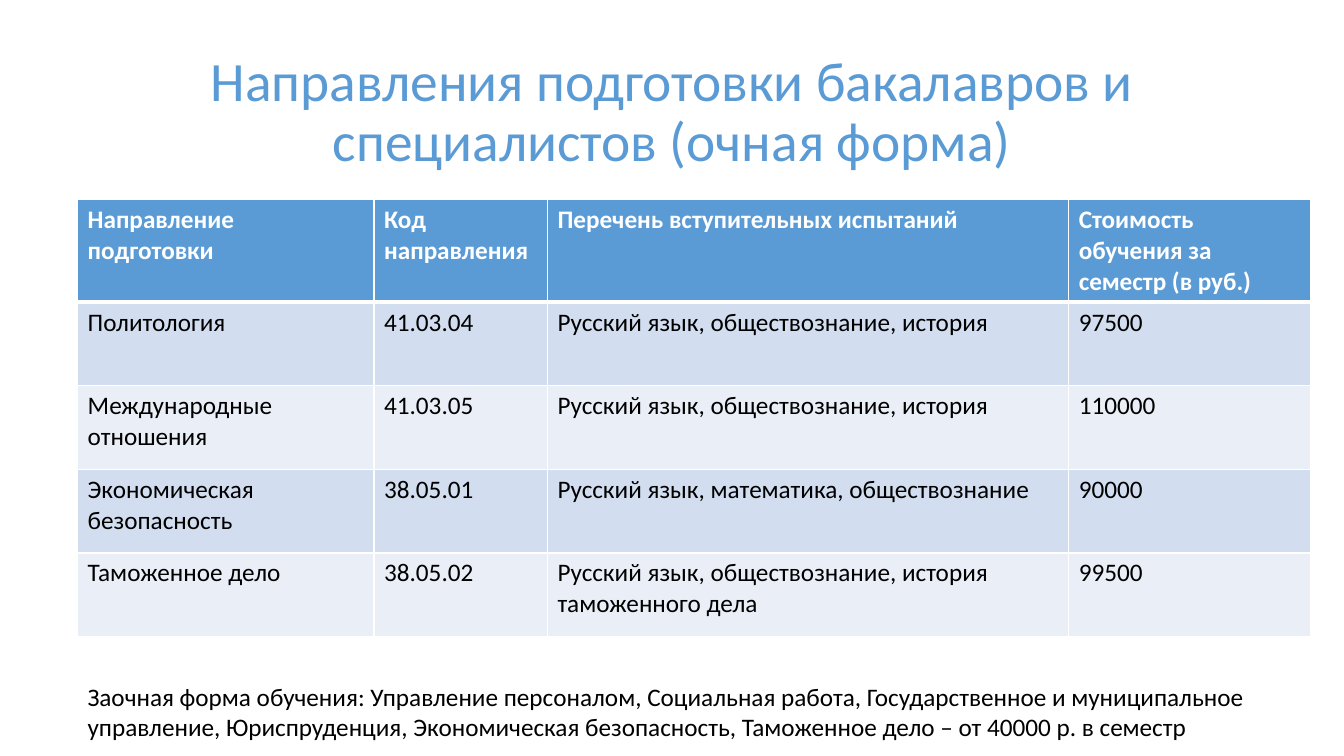
from lxml import etree
from pptx import Presentation
from pptx.dml.color import RGBColor
from pptx.enum.text import MSO_ANCHOR, PP_ALIGN
from pptx.oxml.ns import qn
from pptx.util import Inches, Pt

TITLE = "Направления подготовки бакалавров и специалистов (очная форма)"
ROWS = [
    ("Направление подготовки", "Код направления", "Перечень вступительных испытаний",
     "Стоимость обучения за семестр (в руб.)"),
    ("Политология", "41.03.04", "Русский язык, обществознание, история", "97500"),
    ("Международные отношения", "41.03.05", "Русский язык, обществознание, история", "110000"),
    ("Экономическая безопасность", "38.05.01", "Русский язык, математика, обществознание", "90000"),
    ("Таможенное дело", "38.05.02", "Русский язык, обществознание, история таможенного дела",
     "99500"),
]
NOTE = [
    "Заочная форма обучения: Управление персоналом, Социальная работа, "
    "Государственное и муниципальное",
    "управление, Юриспруденция, Экономическая безопасность, Таможенное дело "
    "– от 40000 р. в семестр",
]
COL_WIDTHS = [2.94, 1.72, 5.17, 2.4]
HEADER_HEIGHT, ROW_HEIGHT = 1, 0.83
LEFT = Inches(0.77)
FONT = "Calibri"
BLUE = RGBColor(0x5B, 0x9B, 0xD5)
BAND_DARK = RGBColor(0xD2, 0xDE, 0xEF)
BAND_LIGHT = RGBColor(0xEA, 0xEF, 0xF7)
WHITE = RGBColor(0xFF, 0xFF, 0xFF)
BLACK = RGBColor(0, 0, 0)


def style_text(tf, size, color, bold=False):
    for p in tf.paragraphs:
        for r in p.runs:
            r.font.name, r.font.size, r.font.bold = FONT, Pt(size), bold
            r.font.color.rgb = color


def set_borders(cell, widths):
    tc_pr = cell._tc.get_or_add_tcPr()
    for i, (side, width) in enumerate(widths.items()):
        ln = etree.Element(qn(f"a:ln{side}"), w=str(Pt(width)))
        fill = etree.SubElement(ln, qn("a:solidFill"))
        etree.SubElement(fill, qn("a:srgbClr"), val=str(WHITE))
        tc_pr.insert(i, ln)


def add_title(s):
    title = s.shapes.title
    title.left, title.top = Inches(1), Inches(0.68)
    title.width, title.height = Inches(11.33), Inches(0.89)
    tf = title.text_frame
    tf.text = TITLE
    tf.word_wrap = True
    tf.vertical_anchor = MSO_ANCHOR.MIDDLE
    p = tf.paragraphs[0]
    p.alignment, p.line_spacing = PP_ALIGN.CENTER, 0.9
    style_text(tf, 39.6, BLUE)


def add_programs(s):
    heights = [HEADER_HEIGHT] + [ROW_HEIGHT] * (len(ROWS) - 1)
    table = s.shapes.add_table(len(ROWS), len(COL_WIDTHS), LEFT, Inches(1.98),
                               Inches(sum(COL_WIDTHS)), Inches(sum(heights))).table
    for col, width in zip(table.columns, COL_WIDTHS):
        col.width = Inches(width)
    for i, (row, height, texts) in enumerate(zip(table.rows, heights, ROWS)):
        row.height = Inches(height)
        header = i == 0
        band = BLUE if header else BAND_DARK if i % 2 else BAND_LIGHT
        for cell, text in zip(row.cells, texts):
            cell.text = text
            cell.fill.solid()
            cell.fill.fore_color.rgb = band
            style_text(cell.text_frame, 18, WHITE if header else BLACK, header)
            set_borders(cell, {"L": 1, "R": 1, "T": 3 if i == 1 else 1, "B": 3 if header else 1})


def add_note(s):
    tf = s.shapes.add_textbox(LEFT, Inches(6.71), Inches(11.86), Inches(0.71)).text_frame
    tf.word_wrap = False
    tf.text = "\n".join(NOTE)
    style_text(tf, 18, BLACK)


def main():
    """Build the slide of study programmes, entrance exams and tuition fees."""
    prs = Presentation()
    prs.slide_width, prs.slide_height = Inches(13.33), Inches(7.5)
    s = prs.slides.add_slide(prs.slide_layouts[5])
    add_title(s)
    add_programs(s)
    add_note(s)
    prs.save("out.pptx")


if __name__ == "__main__":
    main()
